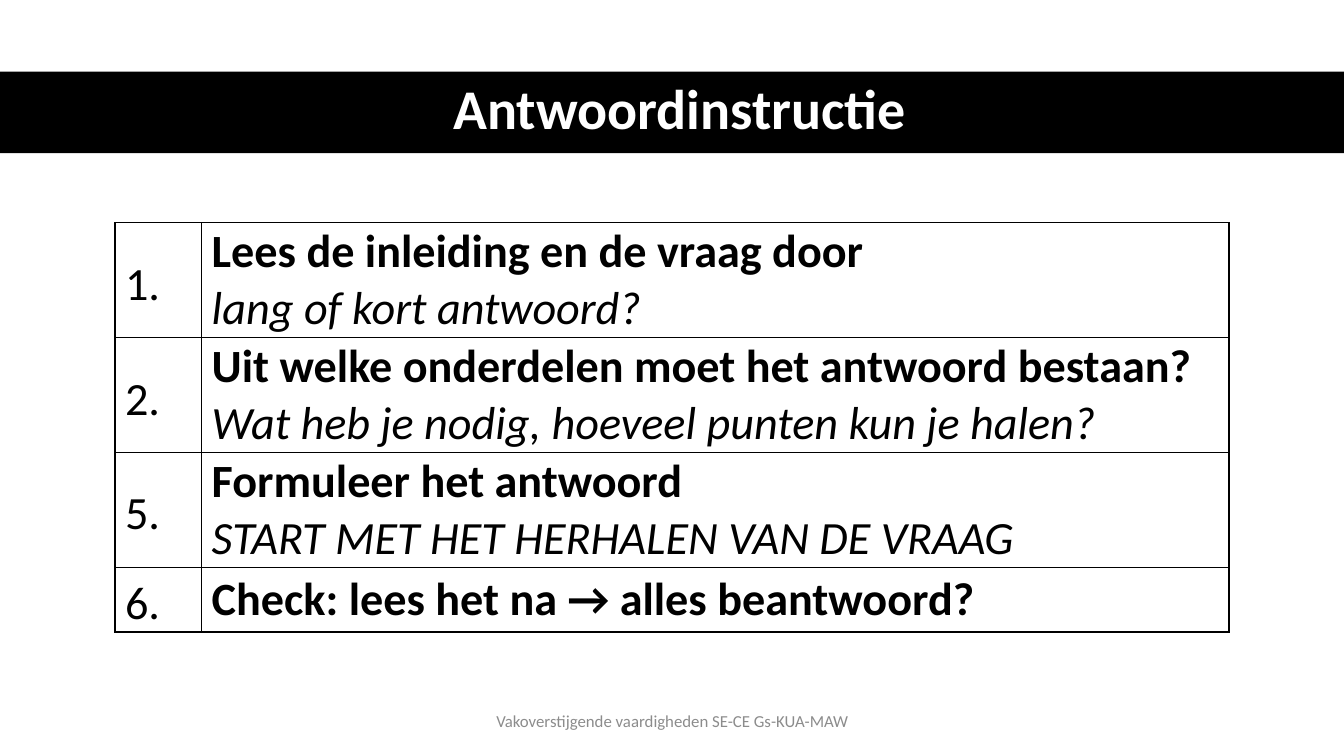
from lxml.etree import SubElement
from pptx import Presentation
from pptx.dml.color import RGBColor
from pptx.enum.shapes import MSO_SHAPE
from pptx.enum.text import MSO_ANCHOR, PP_ALIGN
from pptx.oxml.ns import qn
from pptx.util import Inches, Pt

TITLE = "Antwoordinstructie"
FOOTER = "Vakoverstijgende vaardigheden SE-CE Gs-KUA-MAW"
STEPS = [
    ("1.", "Lees de inleiding en de vraag door", "lang of kort antwoord?"),
    ("2.", "Uit welke onderdelen moet het antwoord bestaan?",
     "Wat heb je nodig, hoeveel punten kun je halen?"),
    ("5.", "Formuleer het antwoord", "START MET HET HERHALEN VAN DE VRAAG"),
    ("6.", "Check: lees het na → alles beantwoord?"),
]
COLORS = {"black": "000000", "white": "FFFFFF", "gray": "8C8C8C"}
COLUMN_WIDTHS = (0.86, 10.19)
ROW_HEIGHTS = {1: 0.64, 2: 1.14}
NUMBER = {"size": Pt(33)}
HEADING = {"size": Pt(33), "bold": True}
HINT = {"size": Pt(33), "italic": True}


def write(frame, lines, color="black", align=PP_ALIGN.LEFT, spacing=1.0):
    frame.word_wrap = True
    for index, (text, style) in enumerate(lines):
        para = frame.add_paragraph() if index else frame.paragraphs[0]
        para.alignment = align
        para.line_spacing = spacing
        span = para.add_run()
        span.text = text
        for name, value in {"name": "Calibri", **style}.items():
            setattr(span.font, name, value)
        span.font.color.rgb = RGBColor.from_string(COLORS[color])


def add_label(page, place, text, style, color, spacing=1.0):
    box = page.shapes.add_textbox(*map(Inches, place))
    box.text_frame.vertical_anchor = MSO_ANCHOR.MIDDLE
    write(box.text_frame, [(text, style)], color, PP_ALIGN.CENTER, spacing)


def add_borders(cell):
    properties = cell._tc.get_or_add_tcPr()
    for side in ("a:lnL", "a:lnR", "a:lnT", "a:lnB"):
        line = SubElement(properties, qn(side), w=str(Pt(1)))
        fill = SubElement(line, qn("a:solidFill"))
        SubElement(fill, qn("a:srgbClr"), val=COLORS["black"])


def fill_cell(cell, lines, spacing):
    settings = {"vertical_anchor": MSO_ANCHOR.MIDDLE, "margin_left": Inches(0.1),
                "margin_right": Inches(0.1), "margin_top": 0, "margin_bottom": 0}
    for name, value in settings.items():
        setattr(cell, name, value)
    write(cell.text_frame, lines, spacing=spacing)
    add_borders(cell)
    cell.fill.background()


def add_steps(page):
    heights = [ROW_HEIGHTS[len(step) - 1] for step in STEPS]
    size = (sum(COLUMN_WIDTHS), sum(heights))
    table = page.shapes.add_table(
        len(STEPS), len(COLUMN_WIDTHS), *map(Inches, (1.14, 2.21, *size))).table
    table.first_row = table.horz_banding = False
    for column, width in zip(table.columns, COLUMN_WIDTHS):
        column.width = Inches(width)
    for row, height, (number, *lines) in zip(table.rows, heights, STEPS):
        row.height = Inches(height)
        fill_cell(row.cells[0], [(number, NUMBER)], 1.15)
        fill_cell(row.cells[1], list(zip(lines, (HEADING, HINT))), 1.0)


def main():
    deck = Presentation()
    deck.slide_width, deck.slide_height = Inches(13.33), Inches(7.5)
    page = deck.slides.add_slide(deck.slide_layouts[6])
    band = page.shapes.add_shape(
        MSO_SHAPE.RECTANGLE, *map(Inches, (0, 0.71, 13.33, 0.81)))
    band.shadow.inherit = False
    band.fill.solid()
    band.fill.fore_color.rgb = RGBColor.from_string(COLORS["black"])
    band.line.fill.background()
    add_label(page, (0.61, 0.7, 12.26, 0.81), TITLE,
              {"size": Pt(40), "bold": True}, "white", 0.9)
    add_steps(page)
    add_label(page, (4.42, 6.95, 4.5, 0.4), FOOTER, {"size": Pt(12)}, "gray")
    deck.save("out.pptx")


if __name__ == "__main__":
    main()
